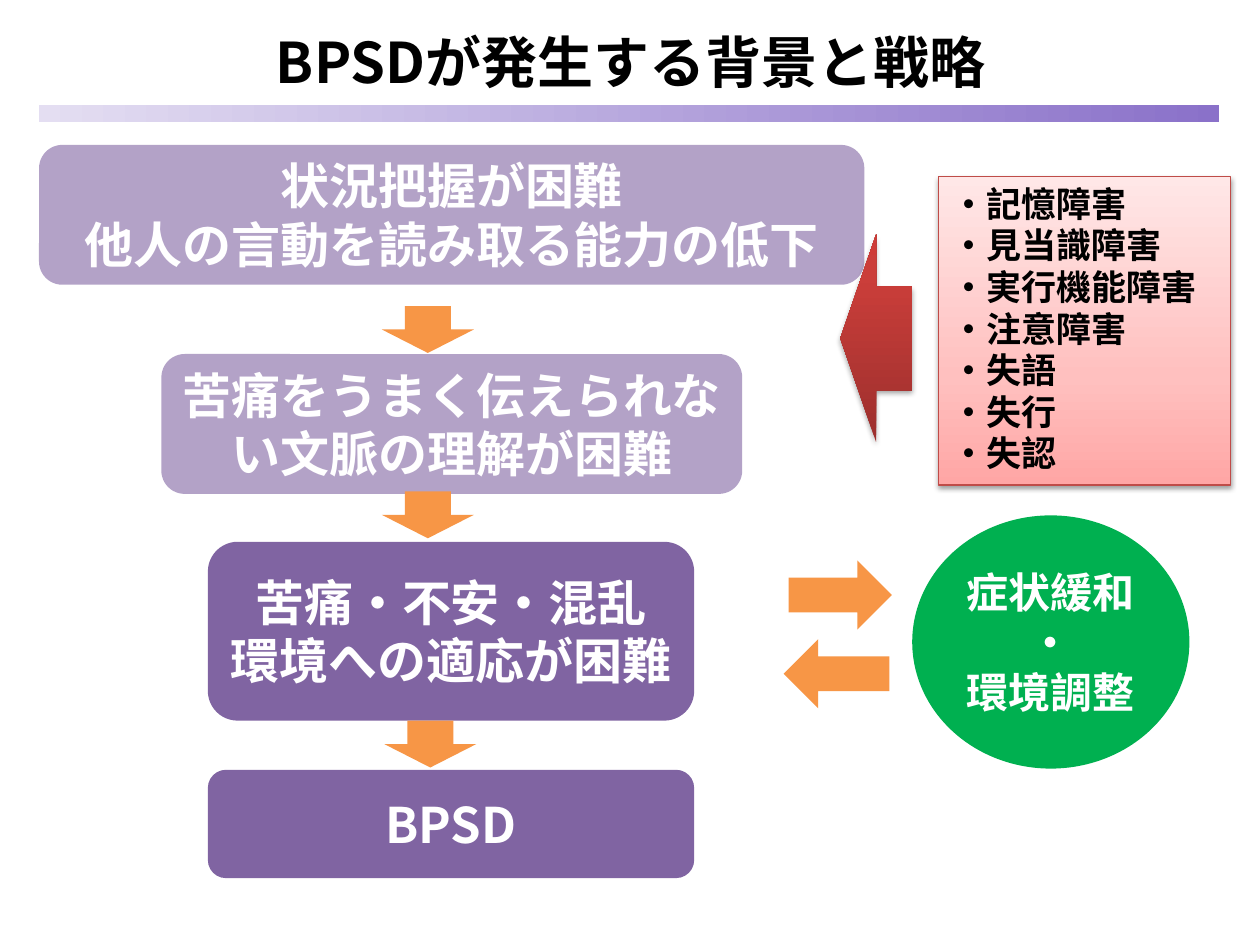
from dataclasses import dataclass

import lxml.etree
import pptx
import pptx.dml.color
import pptx.enum.shapes
import pptx.enum.text
import pptx.oxml.ns
import pptx.util

Pt = pptx.util.Pt
Kind = pptx.enum.shapes.MSO_SHAPE
Align = pptx.enum.text.PP_ALIGN
Anchor = pptx.enum.text.MSO_ANCHOR
qn = pptx.oxml.ns.qn

FONT = "Noto Sans CJK JP"
LEADING = 1.19
COLORS = {
    "black": "000000",
    "white": "FFFFFF",
    "lilac": "B3A2C7",
    "purple": "8064A2",
    "orange": "F79646",
    "green": "00B050",
    "border": "BF4C48",
}
BAR = ((0, "E4DEF2"), (100, "8A71C9"))
PINK = ((0, "FFA6A5"), (35, "FFC0BF"), (100, "FFE7E7"))
RED = ((0, "9C2F2D"), (80, "CB3E3A"), (100, "CE3B37"))


@dataclass
class Item:
    kind: Kind
    left: float
    top: float
    width: float
    height: float
    fill: str
    lines: tuple[str, ...] = ()
    size: float = 28


@dataclass
class Blend:
    stops: tuple[tuple[int, str], ...]
    angle: float


def color(name: str) -> pptx.dml.color.RGBColor:
    return pptx.dml.color.RGBColor.from_string(COLORS[name])


def write(frame, lines: tuple[str, ...], size: float, ink: str,
          align: Align = Align.CENTER, anchor: Anchor = Anchor.MIDDLE) -> None:
    frame.word_wrap = True
    frame.vertical_anchor = anchor
    for index, line in enumerate(lines):
        para = frame.paragraphs[0] if index == 0 else frame.add_paragraph()
        para.text = line
        para.alignment = align
        para.line_spacing = Pt(LEADING * size)
        font = para.font
        font.name = FONT
        font.size = Pt(size)
        font.bold = True
        font.color.rgb = color(ink)
        latin = para._p.pPr.find(qn("a:defRPr")).find(qn("a:latin"))
        asian = lxml.etree.Element(qn("a:ea"), typeface=FONT)
        latin.addnext(asian)


def add_shape(slide, item: Item):
    shape = slide.shapes.add_shape(
        item.kind, Pt(item.left), Pt(item.top), Pt(item.width), Pt(item.height))
    shape.shadow.inherit = False
    shape.line.fill.background()
    if item.fill:
        shape.fill.solid()
        shape.fill.fore_color.rgb = color(item.fill)
    if item.lines:
        write(shape.text_frame, item.lines, item.size, "white")
    return shape


def set_blend(shape, blend: Blend) -> None:
    """Fill with any number of stops; the angle runs counterclockwise."""
    shape.fill.gradient()
    shape.fill.gradient_angle = blend.angle
    stops = shape.element.spPr.find(qn("a:gradFill")).find(qn("a:gsLst"))
    for old in list(stops):
        stops.remove(old)
    for place, value in blend.stops:
        stop = lxml.etree.SubElement(stops, qn("a:gs"), pos=str(place * 1000))
        lxml.etree.SubElement(stop, qn("a:srgbClr"), val=value)


def set_shadow(shape, alpha: int, blur: float, gap: float) -> None:
    """Cast a black shadow straight down."""
    effects = shape.element.spPr.find(qn("a:effectLst"))
    outer = lxml.etree.SubElement(
        effects, qn("a:outerShdw"), blurRad=str(int(Pt(blur))),
        dist=str(int(Pt(gap))), dir="5400000", rotWithShape="0")
    tint = lxml.etree.SubElement(outer, qn("a:srgbClr"), val=COLORS["black"])
    lxml.etree.SubElement(tint, qn("a:alpha"), val=str(alpha * 1000))


ROUND = Kind.ROUNDED_RECTANGLE
STEPS = (
    Item(ROUND, 22.3, 82.8, 471.6, 79.9, "lilac",
         ("状況把握が困難", "他人の言動を読み取る能力の低下")),
    Item(ROUND, 92.2, 202.3, 331.9, 79.9, "lilac",
         ("苦痛をうまく伝えられない文脈の理解が困難",)),
    Item(ROUND, 118.8, 309.6, 277.9, 102.2, "purple",
         ("苦痛・不安・混乱", "環境への適応が困難")),
    Item(ROUND, 118.8, 439.9, 277.9, 61.9, "purple", ("BPSD",)),
)
RELIEF = Item(Kind.OVAL, 521.3, 294.5, 158.4, 144.7, "green",
              ("症状緩和", "・", "環境調整"), 24)
DOWNS = tuple(
    Item(Kind.DOWN_ARROW, left, top, 52.6, 26.8, "orange")
    for left, top in ((218.2, 174.9), (218.2, 280.8), (219.6, 411.8)))
SWAPS = (
    Item(Kind.RIGHT_ARROW, 450.7, 320.2, 59, 39.6, "orange"),
    Item(Kind.LEFT_ARROW, 447.8, 365.2, 60.5, 39.6, "orange"),
)
CAUSES = ("記憶障害", "見当識障害", "実行機能障害", "注意障害",
          "失語", "失行", "失認")


def main() -> None:
    deck = pptx.Presentation()
    deck.slide_width = Pt(720)
    deck.slide_height = Pt(540)
    slide = deck.slides.add_slide(deck.slide_layouts[6])

    title = slide.shapes.add_textbox(Pt(0.7), Pt(10.8), Pt(720), Pt(49))
    write(title.text_frame, ("BPSDが発生する背景と戦略",), 32, "black")

    for item in (*STEPS, RELIEF, *DOWNS, *SWAPS):
        add_shape(slide, item)

    bar = add_shape(slide, Item(Kind.RECTANGLE, 22.3, 60.3, 674.6, 9.4, ""))
    set_blend(bar, Blend(BAR, 0))

    panel = add_shape(
        slide, Item(Kind.RECTANGLE, 536.4, 100.8, 166.6, 176.4, ""))
    set_blend(panel, Blend(PINK, 90))
    panel.line.color.rgb = color("border")
    panel.line.width = Pt(0.75)
    set_shadow(panel, 38, 3.1, 1.6)
    write(panel.text_frame, tuple(f"・{cause}" for cause in CAUSES), 20,
          "black", Align.LEFT, Anchor.TOP)

    arrow = add_shape(slide, Item(Kind.LEFT_ARROW, 480.2, 133.9, 41, 118.8, ""))
    set_blend(arrow, Blend(RED, 90))
    set_shadow(arrow, 35, 3.1, 1.8)

    deck.save("out.pptx")


if __name__ == "__main__":
    main()
